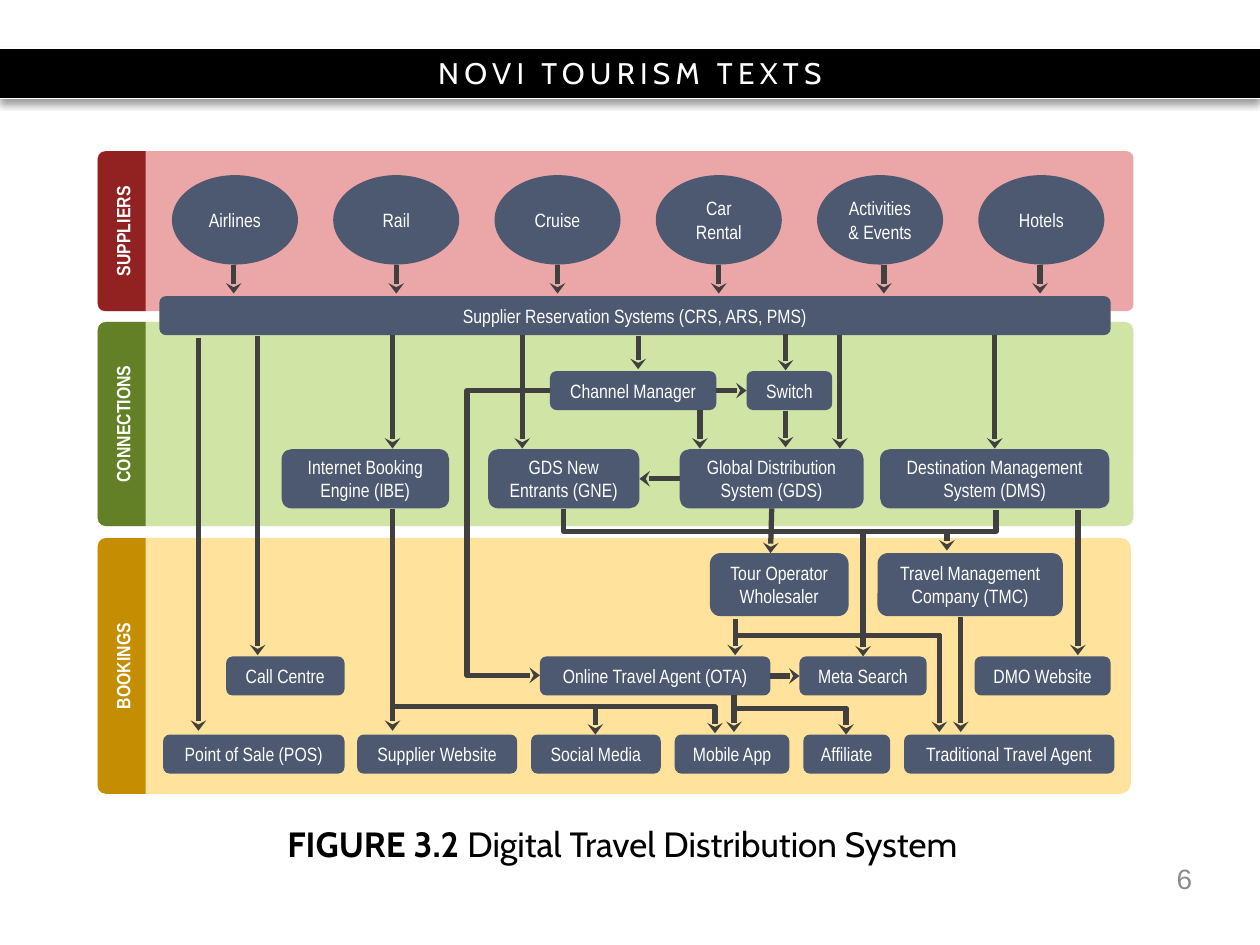
from collections import namedtuple

from lxml.etree import SubElement
from pptx import Presentation
from pptx.dml.color import RGBColor
from pptx.enum.shapes import MSO_CONNECTOR as Route, MSO_SHAPE as Shape
from pptx.enum.text import MSO_ANCHOR as Anchor, PP_ALIGN as Align
from pptx.oxml.ns import qn
from pptx.util import Inches, Pt

COLUMNS, ROWS = 100, 75
CELL = Inches(10) // COLUMNS
SLATE, CHARCOAL, WHITE, BLACK = "4C5971", "404040", "FFFFFF", "000000"
NODE_HEIGHT, TAB_WIDTH = 3.1, 3.8
LABEL = {"size": Pt(11), "name": "Arial Narrow", "bold": False}

Box = namedtuple("Box", "x y w h")
DIAGRAM = Box(7.75, 12, 82.2, 51)
SUPPLIERS = Box(7.75, 12, 82.2, 12.7)
CONNECTIONS = Box(7.75, 25.55, 82.2, 16.2)
BOOKINGS = Box(7.75, 42.7, 82, 20.3)


def colour(value):
    """Turn a hex string into a colour."""
    return RGBColor.from_string(value)


def cells(*values):
    """Turn grid cells into slide lengths."""
    return [round(value * CELL) for value in values]


def inside(box, x, y, w, h):
    """Give the box at an offset within another box."""
    return Box(box.x + x, box.y + y, w, h)


def assign(target, values):
    """Set each named attribute on an object."""
    for name, value in values.items():
        setattr(target, name, value)


def write(shape, runs, ink, font, align=Align.CENTER, **frame_format):
    """Fill the first paragraph with runs of text and bold flags."""
    assign(shape.text_frame, {"word_wrap": True, "vertical_anchor": Anchor.MIDDLE, **frame_format})
    para = shape.text_frame.paragraphs[0]
    para.alignment = align
    for text, bold in runs:
        for row, piece in enumerate(text.split("\n")):
            if row:
                para.add_line_break()
            span = para.add_run()
            span.text = piece
            assign(span.font, {**font, "bold": bold})
            span.font.color.rgb = colour(ink)
    return para


def panel(page, kind, box, fill):
    """Add a flat shape without an outline."""
    shape = page.shapes.add_shape(kind, *cells(*box))
    shape.fill.solid()
    shape.fill.fore_color.rgb = colour(fill)
    shape.line.fill.background()
    shape.shadow.inherit = False
    return shape


def node(page, box, text):
    """Add a rounded box with a label."""
    shape = panel(page, Shape.ROUNDED_RECTANGLE, box, SLATE)
    margins = {"margin_left": Inches(0.1), "margin_right": Inches(0.1),
               "margin_top": Inches(0.02), "margin_bottom": Inches(0.02)}
    write(shape, [(text, False)], WHITE, LABEL, **margins)
    return shape


def link(page, box, start, end, route=Route.STRAIGHT, arrow=True, ink=CHARCOAL, width=3):
    """Add a line between two points of a box."""
    points = [box.x + start[0], box.y + start[1], box.x + end[0], box.y + end[1]]
    line = page.shapes.add_connector(route, *cells(*points))
    line.line.width = Pt(width)
    line.line.color.rgb = colour(ink)
    if arrow:
        SubElement(line.line._get_or_add_ln(), qn("a:tailEnd"), type="stealth", len="sm")
    SubElement(line._element.spPr, qn("a:effectLst"))
    return line


def bend(line, share):
    """Put the middle leg of an elbow at a share of its span."""
    guides = line._element.spPr.find(qn("a:prstGeom")).get_or_add_avLst()
    SubElement(guides, qn("a:gd"), name="adj1", fmla=f"val {round(share * 100000)}")


def corner(page, box, start, end):
    """Add an arrow that runs across and then down."""
    line = link(page, box, start, end, Route.ELBOW)
    line._element.spPr.find(qn("a:prstGeom")).set("prst", "bentConnector2")


def bracket(page, box, start, end, depth):
    """Add an elbow that runs down, across and back up."""
    (x1, y1), (x2, y2) = start, end
    middle_x, middle_y = (x1 + x2) / 2, (y1 + y2) / 2
    half_w, half_h = (y2 - y1) / 2, (x2 - x1) / 2
    line = link(page, box, (middle_x + half_w, middle_y - half_h),
                (middle_x - half_w, middle_y + half_h), Route.ELBOW, arrow=False)
    line._element.spPr.find(qn("a:xfrm")).set("rot", str(270 * 60000))
    bend(line, depth / (y2 - y1))


def header(page, box):
    """Draw the series banner with its shadow and white rules."""
    bar = panel(page, Shape.RECTANGLE, box, BLACK)
    para = write(bar, [("NOVI TOURISM TEXTS", False)], WHITE, {"size": Pt(17), "name": "Cabin"})
    para.runs[0].font._element.set("spc", "300")
    effects = bar._element.spPr.find(qn("a:effectLst"))
    shadow = SubElement(effects, qn("a:outerShdw"), blurRad=str(Pt(4)), dist=str(Pt(3)),
                        dir=str(90 * 60000), rotWithShape="0")
    tint = SubElement(shadow, qn("a:srgbClr"), val=BLACK)
    SubElement(tint, qn("a:alpha"), val="40000")
    for y in (0, box.h):
        link(page, box, (0, y), (box.w, y), arrow=False, ink=WHITE, width=0.75)


def band(page, box, name, fill, tab_fill):
    """Draw a stage background with its upright name tab."""
    panel(page, Shape.ROUNDED_RECTANGLE, box, fill).adjustments[0] = 0.042
    tab_box = inside(box, (TAB_WIDTH - box.h) / 2, (box.h - TAB_WIDTH) / 2, box.h, TAB_WIDTH)
    tab = panel(page, Shape.ROUND_2_SAME_RECTANGLE, tab_box, tab_fill)
    tab.rotation = 270
    write(tab, [(name, True)], WHITE, LABEL)


def suppliers(page, box):
    """Place the supplier ovals and the reservation bar."""
    names = ["Airlines", "Rail", "Cruise", "Car\nRental", "Activities\n& Events", "Hotels"]
    sides = ("left", "right", "top", "bottom")
    for column, name in enumerate(names):
        oval = panel(page, Shape.OVAL, inside(box, 5.9 + 12.8 * column, 1.9, 10, 7.1), SLATE)
        write(oval, [(name, False)], WHITE, LABEL, word_wrap=False,
              **{f"margin_{side}": 0 for side in sides})
    node(page, inside(box, 4.9, 11.5, 75.5, NODE_HEIGHT),
         "Supplier Reservation Systems (CRS, ARS, PMS)")


def node_rows(page, box, rows):
    """Place rows of nodes and return them by name."""
    return {text: node(page, inside(box, x, y, w, h), text)
            for y, h, items in rows for text, x, w in items}


def routes(page, box, nodes):
    """Draw every line of the flow."""
    drops = [(x, 9, 11.3) for x in (10.8, 23.7, 36.5, 49.3, 62.4, 74.8)]
    drops += [(x, 14.6, 23.6) for x in (23.4, 33.7, 58.9, 71.2)]
    drops += [(8, 14.8, 46), (12.7, 14.7, 40), (42.9, 14.7, 17.3), (54.6, 14.5, 17.4),
              (47.8, 20.5, 23.6), (54.6, 20.6, 23.5), (23.4, 28.4, 46), (77.8, 28.5, 40),
              (67.4, 30.1, 31.7), (50.6, 37.1, 40), (68.5, 37, 46.1), (66.8, 38.3, 46.1),
              (50.5, 43.2, 46.1)]
    for x, top, bottom in drops:
        link(page, box, (x, top), (x, bottom))
    gds = nodes["Global Distribution System (GDS)"]
    meta = nodes["Meta Search"]
    link(page, box, (53.4, 28.4), (53.4, 31.9)).begin_connect(gds, 2)
    link(page, box, (60.75, 30.3), (60.75, 40)).end_connect(meta, 0)
    for source, target, leave, enter in [
            (nodes["Channel Manager"], nodes["Switch"], 3, 1),
            (nodes["Online Travel Agent (OTA)"], meta, 3, 1),
            (gds, nodes["GDS New Entrants (GNE)"], 1, 3)]:
        line = link(page, box, (0, 0), (1, 0))
        line.begin_connect(source, leave)
        line.end_connect(target, enter)
    link(page, box, (50.5, 38.45), (66.9, 38.45), arrow=False)
    bend(link(page, box, (35.9, 19), (35.1, 41.6), Route.ELBOW), 8.25)
    bracket(page, box, (37, 28.4), (71.3, 28.5), 1.8)
    for start, end in [((23.5, 44.1), (39.5, 46.3)), ((39.4, 44.1), (49, 46.2)),
                       ((50.6, 44.2), (59.4, 46.3))]:
        corner(page, box, start, end)


def caption(page, box):
    """Format the title placeholder as the figure caption."""
    title = page.shapes.title
    assign(title, dict(zip(("left", "top", "width", "height"), cells(*box))))
    runs = [("FIGURE 3.2 ", True), ("Digital Travel Distribution System", False)]
    write(title, runs, BLACK, {"size": Pt(20), "name": "Cabin"}).line_spacing = Pt(32)


def page_number(page, box):
    """Write the slide number."""
    number = page.shapes.add_textbox(*cells(*box))
    write(number, [("6", False)], "8C8C8C", {"size": Pt(16), "name": "Arial"}, Align.RIGHT)


def main():
    """Build and save the deck."""
    deck = Presentation()
    deck.slide_width, deck.slide_height = cells(COLUMNS, ROWS)
    page = deck.slides.add_slide(deck.slide_layouts[5])
    header(page, Box(0, 3.8, COLUMNS, 4))
    band(page, SUPPLIERS, "SUPPLIERS", "EBA7A8", "922222")
    band(page, CONNECTIONS, "CONNECTIONS", "D0E4A6", "638026")
    band(page, BOOKINGS, "BOOKINGS", "FFE39D", "C58D01")
    suppliers(page, SUPPLIERS)
    nodes = node_rows(page, CONNECTIONS, [
        (3.9, NODE_HEIGHT, [("Channel Manager", 35.9, 13.2), ("Switch", 51.5, 6.8)]),
        (10.1, 4.7, [("Internet Booking Engine (IBE)", 14.6, 13.3),
                     ("GDS New Entrants (GNE)", 31, 12),
                     ("Global Distribution System (GDS)", 46.2, 14.6),
                     ("Destination Management System (DMS)", 62.1, 18.2)])])
    nodes |= node_rows(page, BOOKINGS, [
        (1.2, 5, [("Tour Operator\nWholesaler", 48.6, 11),
                  ("Travel Management Company (TMC)", 61.9, 14.7)]),
        (9.4, NODE_HEIGHT, [("Call Centre", 10.2, 9.4), ("Online Travel Agent (OTA)", 35.1, 18.3),
                            ("Meta Search", 55.7, 10.1), ("DMO Website", 69.6, 10.8)]),
        (15.6, NODE_HEIGHT, [("Point of Sale (POS)", 5.2, 14.4), ("Supplier Website", 20.6, 12.7),
                             ("Social Media", 34.4, 10.3), ("Mobile App", 45.8, 9.1),
                             ("Affiliate", 56, 6.9), ("Traditional Travel Agent", 64, 16.7)])])
    routes(page, DIAGRAM, nodes)
    caption(page, Box(6.6, 64, 85.6, 4.8))
    page_number(page, Box(72.3, 67.7, 23.3, 4))
    deck.save("out.pptx")


if __name__ == "__main__":
    main()
